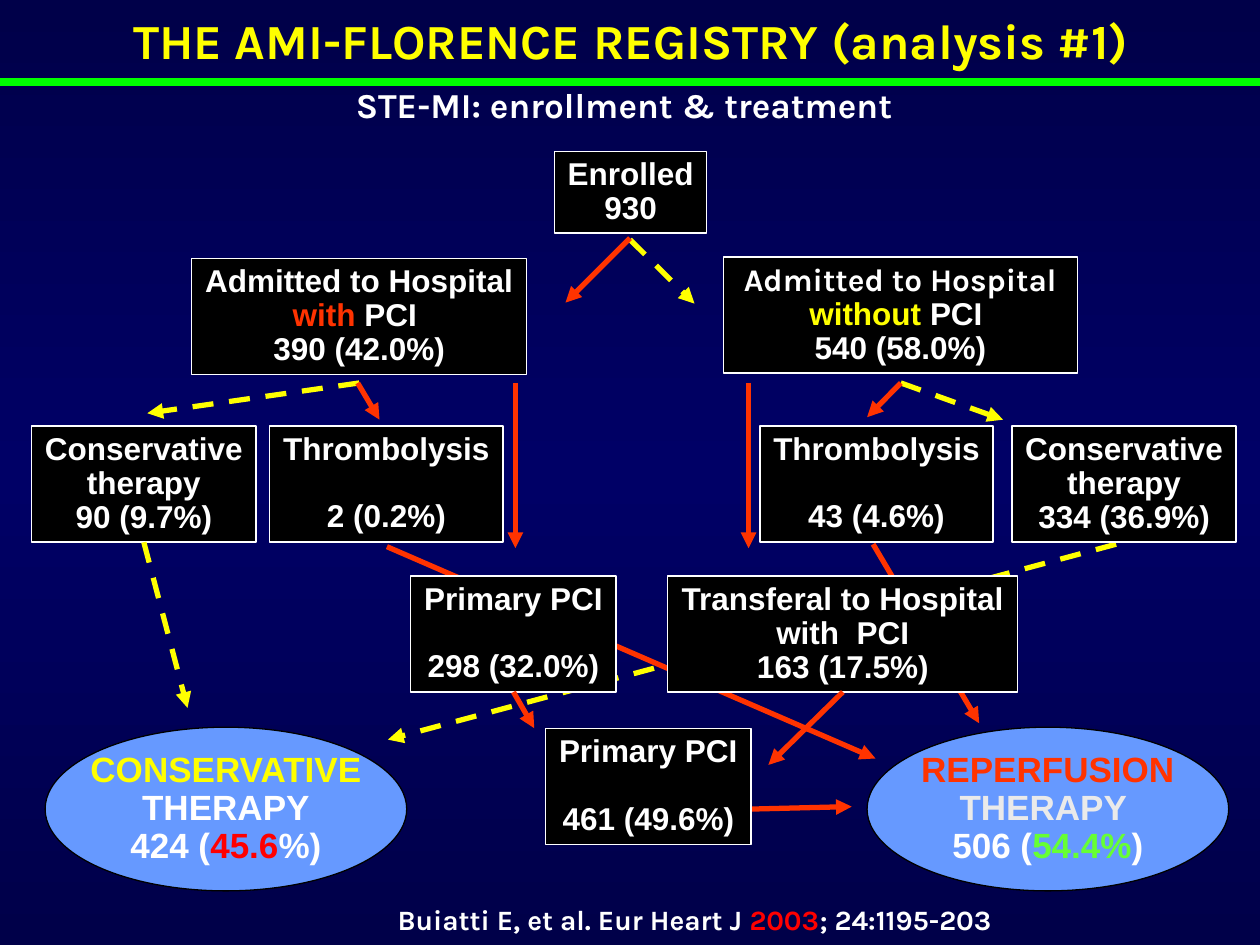
from copy import deepcopy
from dataclasses import dataclass

from lxml.etree import SubElement
from pptx import Presentation
from pptx.dml.color import RGBColor
from pptx.enum.dml import MSO_LINE
from pptx.enum.shapes import MSO_CONNECTOR, MSO_SHAPE
from pptx.enum.text import MSO_ANCHOR, MSO_AUTO_SIZE, PP_ALIGN
from pptx.oxml.ns import qn
from pptx.util import Cm, Pt

WHITE = RGBColor(0xFF, 0xFF, 0xFF)
BLACK = RGBColor(0x00, 0x00, 0x00)
YELLOW = RGBColor(0xFF, 0xFF, 0x00)
ORANGE = RGBColor(0xFF, 0x33, 0x00)
RED = RGBColor(0xFF, 0x00, 0x00)
GREEN = RGBColor(0x00, 0xFF, 0x00)
LIME = RGBColor(0x66, 0xFF, 0x33)
PALE = RGBColor(0xEA, 0xEA, 0xEA)
SKY = RGBColor(0x66, 0x99, 0xFF)
NAVY = RGBColor(0x00, 0x00, 0x49)
MIDNIGHT = RGBColor(0x00, 0x00, 0x66)

BOX_HEIGHT = 2.34
THERAPY_TOP, PRIMARY_TOP = 8.59, 11.61
BRANCH_TOP, BRANCH_END = 7.72, 11.05  # lines leaving the two hospital boxes
BOTTOM = 2  # connection site


@dataclass
class Span:
    text: str
    color: RGBColor = WHITE


@dataclass
class Line:
    spans: list[Span]
    font: str = "Arial"
    gap: float = 0


@dataclass
class Node:
    left: float
    top: float
    width: float
    height: float
    lines: list[Line]
    outcome: bool = False


@dataclass
class Arrow:
    start: tuple[float, float]
    end: tuple[float, float]
    dashed: bool = False
    source: str = ""


def plain(*texts: str) -> list[Line]:
    return [Line([Span(text)]) for text in texts]


def spaced(label: str, count: str) -> list[Line]:
    """A label and a count, one line apart."""
    return [Line([Span(label)]), Line([Span(count)], gap=19)]


def add_spans(para, spans: list[Span]) -> None:
    for item in spans:
        span = para.add_run()
        span.text = item.text
        span.font.color.rgb = item.color


def format_para(para, font: str, size: float, spacing: float) -> None:
    para.alignment = PP_ALIGN.CENTER
    para.line_spacing = spacing
    para.font.name = font
    para.font.size = Pt(size)
    para.font.bold = True


def add_node(page, node: Node):
    kind = MSO_SHAPE.OVAL if node.outcome else MSO_SHAPE.RECTANGLE
    box = page.shapes.add_shape(
        kind, Cm(node.left), Cm(node.top), Cm(node.width), Cm(node.height))
    box.shadow.inherit = False
    box.fill.solid()
    box.fill.fore_color.rgb = SKY if node.outcome else BLACK
    box.line.color.rgb = BLACK if node.outcome else WHITE
    box.line.width = Pt(0.75)
    frame = box.text_frame
    frame.word_wrap = False
    frame.vertical_anchor = MSO_ANCHOR.MIDDLE
    for index, line in enumerate(node.lines):
        para = frame.add_paragraph() if index else frame.paragraphs[0]
        format_para(para, line.font, 20 if node.outcome else 18, 0.9)
        if line.gap:
            para.space_before = Pt(line.gap)
        add_spans(para, line.spans)
    return box


def add_line(page, start: tuple[float, float], end: tuple[float, float],
             color: RGBColor, width: float):
    line = page.shapes.add_connector(
        MSO_CONNECTOR.STRAIGHT, *(Cm(value) for value in start + end))
    line.line.color.rgb = color
    line.line.width = Pt(width)
    SubElement(line._element.spPr, qn("a:effectLst"))
    return line


def add_arrow(page, arrow: Arrow, boxes: dict) -> None:
    line = add_line(page, arrow.start, arrow.end, YELLOW if arrow.dashed else ORANGE, 3)
    if arrow.dashed:
        line.line.dash_style = MSO_LINE.DASH
    SubElement(line.line._get_or_add_ln(), qn("a:tailEnd"), type="triangle")
    if arrow.source:
        line.begin_connect(boxes[arrow.source], BOTTOM)


def paint_background(page) -> None:
    fill = page.background.fill
    fill.gradient()
    fill.gradient_angle = 270
    stops = page._element.xpath(".//a:gsLst")[0]
    stops.append(deepcopy(stops[-1]))
    for stop, position, color in zip(fill.gradient_stops, (0, 0.5, 1), (NAVY, MIDNIGHT, NAVY)):
        stop.position = position
        stop.color.rgb = color


NODES = {
    "enrolled": Node(11.18, 3.05, 3.07, 1.65, plain("Enrolled", "930")),
    "with PCI": Node(3.86, 5.21, 6.76, BOX_HEIGHT, [
        *plain("Admitted to Hospital"),
        Line([Span("with", ORANGE), Span(" PCI ")]),
        *plain("390 (42.0%)")]),
    "without PCI": Node(14.58, 5.18, 7.14, BOX_HEIGHT, [
        Line([Span("Admitted to Hospital")], font="Karla"),
        Line([Span("without", YELLOW), Span(" PCI ")]),
        *plain("540 (58.0%)")]),
    "conservative left": Node(0.64, THERAPY_TOP, 4.52, BOX_HEIGHT,
                              plain("Conservative", "therapy", "90 (9.7%)")),
    "thrombolysis left": Node(5.44, THERAPY_TOP, 4.7, BOX_HEIGHT,
                              spaced("Thrombolysis", "2 (0.2%)")),
    "thrombolysis right": Node(15.32, THERAPY_TOP, 4.7, BOX_HEIGHT,
                               spaced("Thrombolysis", "43 (4.6%)")),
    "conservative right": Node(20.4, THERAPY_TOP, 4.52, BOX_HEIGHT,
                               plain("Conservative", "therapy", "334 (36.9%)")),
    "primary": Node(8.28, PRIMARY_TOP, 4.14, BOX_HEIGHT, spaced("Primary PCI", "298 (32.0%)")),
    "transferal": Node(13.46, PRIMARY_TOP, 7.06, BOX_HEIGHT,
                       plain("Transferal to Hospital", "with  PCI", "163 (17.5%)")),
    "all primary": Node(11, 14.68, 4.14, BOX_HEIGHT, spaced("Primary PCI", "461 (49.6%)")),
    "conservative": Node(0.91, 14.66, 7.29, 3.3, [
        Line([Span("CONSERVATIVE", YELLOW)]),
        *plain("THERAPY"),
        Line([Span("424 ("), Span("45.6", RED), Span("%)")])], outcome=True),
    "reperfusion": Node(17.48, 14.66, 7.29, 3.3, [
        Line([Span("REPERFUSION", ORANGE)]),
        Line([Span("THERAPY ", PALE)]),
        Line([Span("506 ("), Span("54.4%", LIME), Span(")")])], outcome=True),
}

ARROWS = [
    Arrow((22.5, 10.97), (7.82, 14.91), dashed=True),
    Arrow((7.24, BRANCH_TOP), (2.97, 8.33), dashed=True),
    Arrow((18.16, BRANCH_TOP), (20.22, 8.46), dashed=True),
    Arrow((12.7, 4.83), (14, 6.12), dashed=True),
    Arrow((12.7, 4.8), (11.4, 6.1)),
    Arrow((7.21, BRANCH_TOP), (7.65, 8.46)),
    Arrow((18.16, BRANCH_TOP), (17.48, 8.41)),
    Arrow((10.39, BRANCH_TOP), (10.39, BRANCH_END)),
    Arrow((15.09, BRANCH_TOP), (15.09, BRANCH_END)),
    Arrow((7.8, 11.02), (17.65, 15.29)),
    Arrow((17.6, 10.97), (19.74, 14.58)),
    Arrow((15.14, 16.31), (17.17, 16.26)),
]
JOINED_ARROWS = [
    Arrow((2.9, 10.93), (3.78, 14.27), dashed=True, source="conservative left"),
    Arrow((10.35, 13.95), (10.77, 14.68), source="primary"),
    Arrow((16.99, 13.95), (15.49, 15.42), source="transferal"),
]


def main() -> None:
    deck = Presentation()
    deck.slide_width, deck.slide_height = Cm(25.4), Cm(19.05)
    page = deck.slides.add_slide(deck.slide_layouts[5])
    paint_background(page)

    # Title, subtitle and green rule
    title = page.shapes.title
    title.left, title.top, title.width, title.height = Cm(0.15), Cm(0.25), Cm(25.12), Cm(2.29)
    title.text_frame.auto_size = MSO_AUTO_SIZE.NONE
    title.text_frame.vertical_anchor = MSO_ANCHOR.MIDDLE
    para = title.text_frame.paragraphs[0]
    format_para(para, "Karla", 28, 1)
    add_spans(para, [Span("THE AMI-FLORENCE REGISTRY (analysis #1)", YELLOW)])
    para.add_line_break()
    add_spans(para, [Span("STE-MI: enrollment & treatment"), Span(" ", YELLOW)])
    para.runs[1].font.size = Pt(20)
    add_line(page, (0, 1.65), (25.4, 1.65), GREEN, 4.5)

    # Flow chart: free arrows pass behind the boxes
    boxes = {}
    for arrow in ARROWS:
        add_arrow(page, arrow, boxes)
    for name, node in NODES.items():
        boxes[name] = add_node(page, node)
    for arrow in JOINED_ARROWS:
        add_arrow(page, arrow, boxes)

    # Citation
    citation = page.shapes.add_textbox(Cm(4.83), Cm(18.06), Cm(18.34), Cm(0.81))
    frame = citation.text_frame
    frame.word_wrap = True
    frame.margin_left = frame.margin_top = frame.margin_right = frame.margin_bottom = 0
    format_para(frame.paragraphs[0], "Karla", 16, 1.2)
    add_spans(frame.paragraphs[0], [
        Span("Buiatti E, et al. Eur Heart J "), Span("2003", RED), Span("; 24:1195-203")])

    deck.save("out.pptx")


if __name__ == "__main__":
    main()
